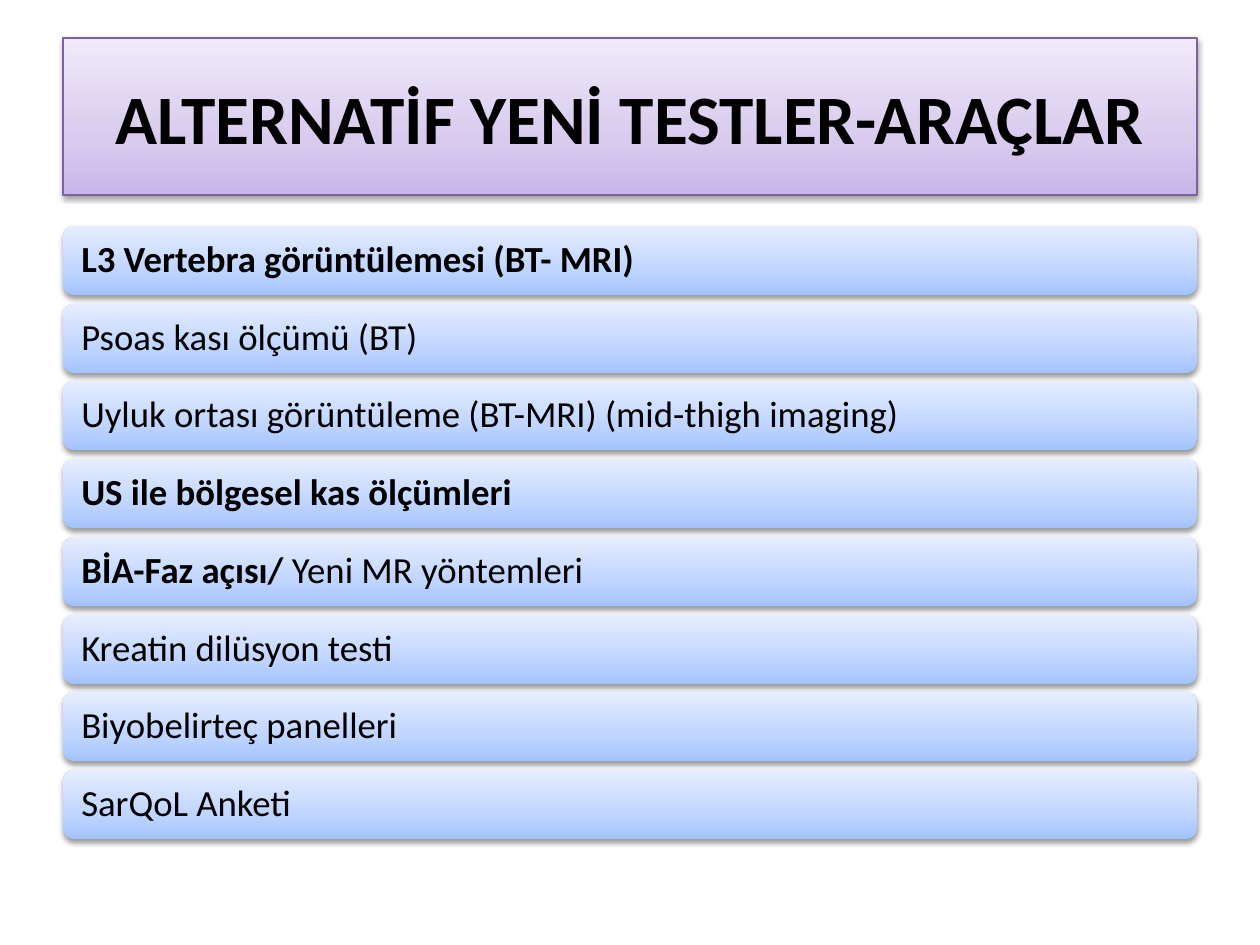
from copy import deepcopy

from pptx import Presentation
from pptx.dml.color import RGBColor
from pptx.enum.shapes import MSO_SHAPE as Shape
from pptx.enum.text import MSO_ANCHOR as Anchor, MSO_AUTO_SIZE as AutoSize, PP_ALIGN as Align
from pptx.oxml import parse_xml
from pptx.oxml.ns import nsdecls, qn
from pptx.util import Emu, Pt

EMU_PER_PX = 914400 / 126
BLACK = RGBColor(0x00, 0x00, 0x00)
PURPLE = RGBColor(0x7D, 0x60, 0xA0)
LILAC_STOPS = {
    0: RGBColor(0xC9, 0xB5, 0xE8),
    0.35: RGBColor(0xD8, 0xCB, 0xEE),
    1: RGBColor(0xF0, 0xEA, 0xF9),
}
BLUE_STOPS = {
    0: RGBColor(0xA4, 0xC4, 0xFF),
    0.35: RGBColor(0xBF, 0xD4, 0xFF),
    1: RGBColor(0xE6, 0xEE, 0xFF),
}
SHADOW_XML = (
    f'<a:outerShdw {nsdecls("a")} blurRad="40000" dist="20000" dir="5400000" rotWithShape="0">'
    '<a:srgbClr val="000000"><a:alpha val="38000"/></a:srgbClr></a:outerShdw>'
)

LEFT, WIDTH = 63, 1134
FIRST_TOP, LAST_TOP, ROW_HEIGHT = 226, 770, 69
TITLE = "ALTERNATİF YENİ TESTLER-ARAÇLAR"
# Each row is a list of (text, bold) spans.
ROWS = [
    [("L3 Vertebra görüntülemesi (BT- MRI)", True)],
    [("Psoas kası ölçümü (BT)", False)],
    [("Uyluk ortası görüntüleme (BT-MRI) (mid-thigh imaging)", False)],
    [("US ile bölgesel kas ölçümleri", True)],
    [("BİA-Faz açısı/ ", True), ("Yeni MR yöntemleri", False)],
    [("Kreatin dilüsyon testi", False)],
    [("Biyobelirteç panelleri", False)],
    [("SarQoL Anketi", False)],
]


def px(length):
    return Emu(round(length * EMU_PER_PX))


def apply(target, values):
    for name, value in values.items():
        setattr(target, name, value)


class SlideBuilder:
    """Holds the text style and the slide being filled."""

    font = {"name": "Calibri"}
    frame = {"word_wrap": True, "auto_size": AutoSize.NONE, "vertical_anchor": Anchor.MIDDLE}

    def __init__(self, slide):
        self.slide = slide

    def shade(self, shape, stops):
        """Give the shape a bottom-to-top gradient and a soft shadow."""
        shape.fill.gradient()
        shape.fill.gradient_angle = 90
        properties = shape._element.spPr
        stop_list = properties.find(qn("a:gradFill")).find(qn("a:gsLst"))
        stop_list.append(deepcopy(stop_list[0]))
        for stop, (position, color) in zip(shape.fill.gradient_stops, stops.items()):
            stop.position = position
            stop.color.rgb = color
        shape.shadow.inherit = False
        properties.find(qn("a:effectLst")).append(parse_xml(SHADOW_XML))

    def add_spans(self, shape, spans, size, **paragraph):
        apply(shape.text_frame, self.frame)
        para = shape.text_frame.paragraphs[0]
        apply(para, paragraph)
        for text, bold in spans:
            span = para.add_run()
            span.text = text
            apply(span.font, {**self.font, "size": Pt(size), "bold": bold})
            span.font.color.rgb = BLACK

    def title(self, text, top, height):
        box = self.slide.shapes.title
        apply(box, {"left": px(LEFT), "top": px(top), "width": px(WIDTH), "height": px(height)})
        self.shade(box, LILAC_STOPS)
        box.line.color.rgb = PURPLE
        box.line.width = Pt(0.75)
        self.add_spans(box, [(text, True)], 39.6, alignment=Align.CENTER)

    def row(self, spans, top):
        bar = self.slide.shapes.add_shape(
            Shape.ROUNDED_RECTANGLE, px(LEFT), px(top), px(WIDTH), px(ROW_HEIGHT))
        self.shade(bar, BLUE_STOPS)
        bar.line.fill.background()
        apply(bar.text_frame, {"margin_left": px(15), "margin_right": px(15)})
        self.add_spans(bar, spans, 21, alignment=Align.LEFT, line_spacing=0.9)


def main():
    deck = Presentation()
    deck.slide_width, deck.slide_height = px(1260), px(945)
    title_only = deck.slide_layouts[5]
    page = SlideBuilder(deck.slides.add_slide(title_only))
    page.title(TITLE, 38, 157)
    pitch = (LAST_TOP - FIRST_TOP) / (len(ROWS) - 1)
    for index, spans in enumerate(ROWS):
        page.row(spans, round(FIRST_TOP + index * pitch))
    deck.save("out.pptx")


if __name__ == "__main__":
    main()
